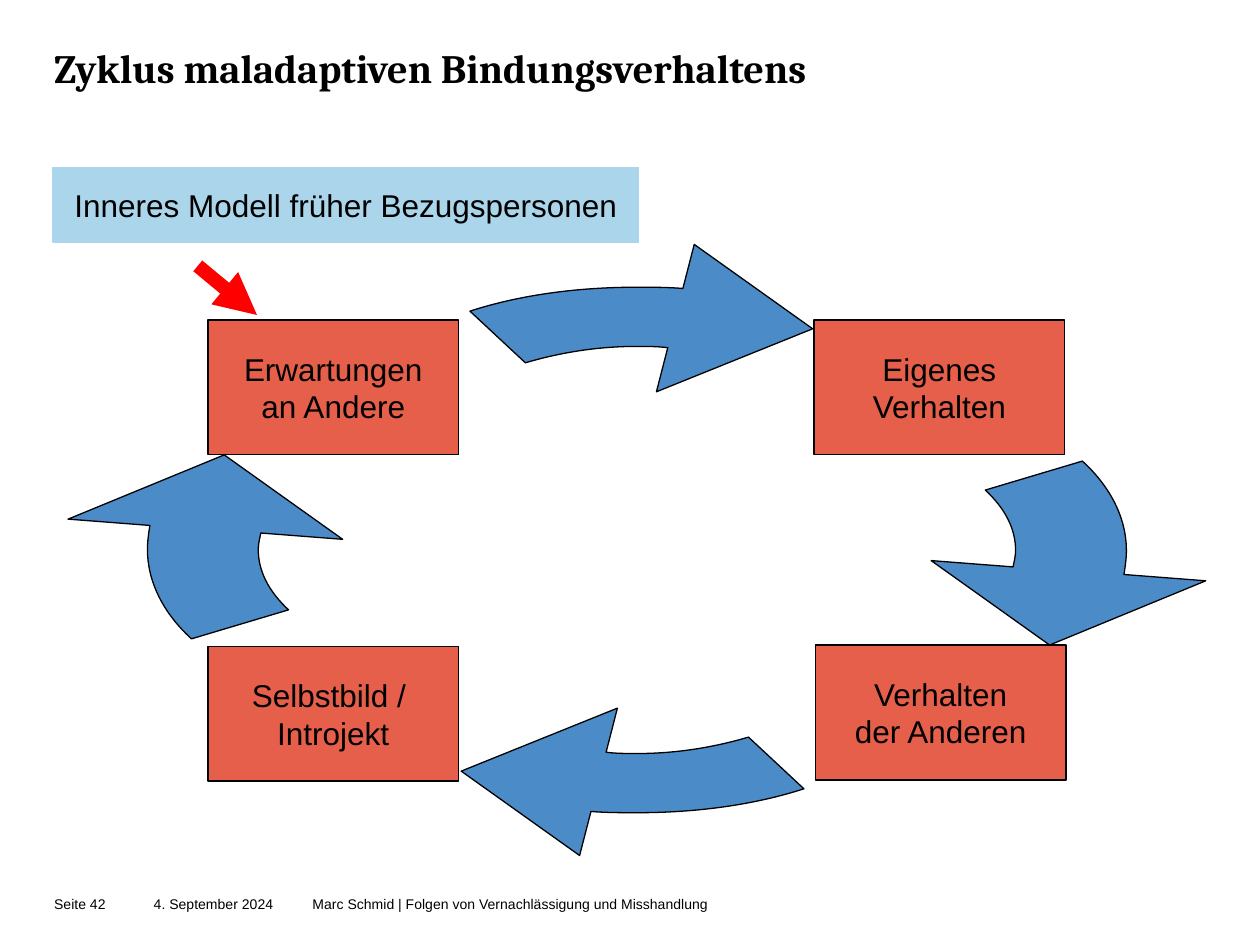
import lxml.etree
import pptx
import pptx.dml.color
import pptx.enum.shapes
import pptx.enum.text
import pptx.oxml.ns
import pptx.util

Inches = pptx.util.Inches
Pt = pptx.util.Pt
qn = pptx.oxml.ns.qn
ANCHOR = pptx.enum.text.MSO_ANCHOR
ALIGN = pptx.enum.text.PP_ALIGN

COLORS = {
    "text": "000000",
    "outline": "000000",
    "station": "E65F4B",
    "model": "ABD5EA",
    "cycle": "4B8CC8",
    "influence": "FF0000",
}

CYCLE_CENTER = (5.055, 4.365)
STATION_SIZE = (1.99, 1.07)
STATIONS = (
    (6.46, 2.54, ("Eigenes", "Verhalten")),
    (1.65, 5.13, ("Selbstbild / ", "Introjekt")),
    (6.47, 5.12, ("Verhalten", "der Anderen")),
    (1.65, 2.54, ("Erwartungen", "an Andere")),
)

# Arrow outlines: one point is a corner, three points are a Bézier curve
TOP_ARROW = [
    [(5.3, 2.76)],
    [(5.22, 2.75), (5.14, 2.75), (5.05, 2.75)],
    [(4.74, 2.75), (4.44, 2.8), (4.17, 2.88)],
    [(3.73, 2.47)],
    [(4.13, 2.34), (4.59, 2.28), (5.05, 2.28)],
    [(5.18, 2.28), (5.3, 2.28), (5.42, 2.29)],
    [(5.51, 1.94)], [(6.45, 2.61)], [(5.21, 3.11)], [(5.3, 2.76)],
]
RIGHT_ARROW = [
    [(8.04, 4.5)],
    [(8.05, 4.45), (8.06, 4.41), (8.06, 4.37)],
    [(8.06, 4.2), (7.98, 4.04), (7.82, 3.89)],
    [(8.59, 3.66)],
    [(8.82, 3.87), (8.94, 4.12), (8.94, 4.37)],
    [(8.94, 4.43), (8.93, 4.5), (8.92, 4.56)],
    [(9.57, 4.61)], [(8.33, 5.12)], [(7.39, 4.45)], [(8.04, 4.5)],
]


def rgb(name):
    return pptx.dml.color.RGBColor.from_string(COLORS[name])


def paint(shape, fill, line):
    shape.shadow.inherit = False
    shape.fill.solid()
    shape.fill.fore_color.rgb = rgb(fill)
    shape.line.color.rgb = rgb(line)
    shape.line.width = Pt(0.75)


def place(shape, left, top, width, height):
    shape.left, shape.top = Inches(left), Inches(top)
    shape.width, shape.height = Inches(width), Inches(height)


def write(shape, lines, size, align=ALIGN.LEFT, anchor=ANCHOR.MIDDLE,
          font="Arial", bold=False, wrap=True):
    frame = shape.text_frame
    frame.text = "\n".join(lines)
    frame.auto_size = pptx.enum.text.MSO_AUTO_SIZE.NONE
    frame.word_wrap = wrap
    frame.vertical_anchor = anchor
    frame.margin_left = frame.margin_right = 0
    frame.margin_top = frame.margin_bottom = 0
    for paragraph in frame.paragraphs:
        paragraph.alignment = align
        paragraph.font.name = font
        paragraph.font.size = Pt(size)
        paragraph.font.bold = bold
        paragraph.font.color.rgb = rgb("text")


def set_title(slide, text):
    title = slide.shapes.title
    place(title, 0.43, 0.34, 9.14, 0.98)
    write(title, [text], 23, anchor=ANCHOR.TOP, font="Cambria", bold=True)


def add_box(shapes, left, top, width, height, lines, fill, line):
    box = shapes.add_shape(
        pptx.enum.shapes.MSO_SHAPE.RECTANGLE,
        Inches(left), Inches(top), Inches(width), Inches(height))
    paint(box, fill, line)
    write(box, lines, 18, align=ALIGN.CENTER, wrap=False)


def add_footer(slide, left, top, width, height, text):
    footer = slide.shapes.add_textbox(
        Inches(left), Inches(top), Inches(width), Inches(height))
    write(footer, [text], 8)


def to_frame(outline, left, top, width, height, turned):
    """Give the outline in its frame's own axes, before a quarter turn."""
    middle_x, middle_y = left + width / 2, top + height / 2

    def convert(x, y):
        dx, dy = x - middle_x, y - middle_y
        if turned:
            dx, dy = dy, -dx
        return dx + width / 2, dy + height / 2

    return [[convert(*point) for point in part] for part in outline]


def add_cycle_arrow(shapes, outline, frame, rotation):
    builder = shapes.build_freeform(0, 0)
    builder.add_line_segments([(Inches(1), 0), (0, Inches(1))])
    arrow = builder.convert_to_shape()
    place(arrow, *frame)
    arrow.rotation = rotation
    paint(arrow, "cycle", "outline")

    # Curves in place of the straight segments
    route = arrow._element.find(".//" + qn("a:path"))
    for segment in list(route):
        route.remove(segment)
    route.set("w", str(arrow.width))
    route.set("h", str(arrow.height))
    for index, part in enumerate(outline):
        kind = "cubicBezTo" if len(part) == 3 else "lnTo" if index else "moveTo"
        segment = lxml.etree.SubElement(route, qn("a:" + kind))
        for x, y in part:
            lxml.etree.SubElement(segment, qn("a:pt"),
                                  x=str(Inches(x)), y=str(Inches(y)))
    lxml.etree.SubElement(route, qn("a:close"))


def add_arrow_pair(shapes, outline, frame, rotation):
    """Add an arrow and its opposite across the middle of the cycle."""
    local = to_frame(outline, *frame, turned=rotation == 90)
    left, top, width, height = frame
    opposite = (2 * CYCLE_CENTER[0] - left - width,
                2 * CYCLE_CENTER[1] - top - height, width, height)
    add_cycle_arrow(shapes, local, frame, rotation)
    add_cycle_arrow(shapes, local, opposite, rotation + 180)


def add_influence_arrow(slide, start, end):
    arrow = slide.shapes.add_connector(
        pptx.enum.shapes.MSO_CONNECTOR.STRAIGHT,
        *(Inches(value) for value in (*start, *end)))
    arrow.line.color.rgb = rgb("influence")
    arrow.line.width = Pt(8)
    stroke = arrow.line._get_or_add_ln()
    lxml.etree.SubElement(stroke, qn("a:tailEnd"), type="triangle")
    lxml.etree.SubElement(stroke.getparent(), qn("a:effectLst"))


def main():
    deck = pptx.Presentation()
    deck.slide_width, deck.slide_height = Inches(10), Inches(7.5)
    slide = deck.slides.add_slide(deck.slide_layouts[5])
    set_title(slide, "Zyklus maladaptiven Bindungsverhaltens")

    # Cycle: arrows and stations in one group
    cycle = slide.shapes.add_group_shape().shapes
    add_arrow_pair(cycle, TOP_ARROW, (2.41, 2.28, 5.29, 2.84), 0)
    add_arrow_pair(cycle, RIGHT_ARROW, (4.87, 1.72, 2.84, 5.29), 90)
    for left, top, lines in STATIONS:
        add_box(cycle, left, top, *STATION_SIZE, lines, "station", "outline")

    # Inner model and its influence on the cycle
    add_box(slide.shapes, 0.42, 1.33, 4.65, 0.59,
            ["Inneres Modell früher Bezugspersonen"], "model", "model")
    add_influence_arrow(slide, (1.57, 2.11), (2.04, 2.5))

    # Footer
    add_footer(slide, 0.43, 7.02, 0.63, 0.31, "Seite 42")
    add_footer(slide, 2.48, 7.03, 4.33, 0.28,
               "Marc Schmid | Folgen von Vernachlässigung und Misshandlung")
    add_footer(slide, 1.22, 7.02, 1.18, 0.31, "4. September 2024")

    deck.save("out.pptx")


if __name__ == "__main__":
    main()
